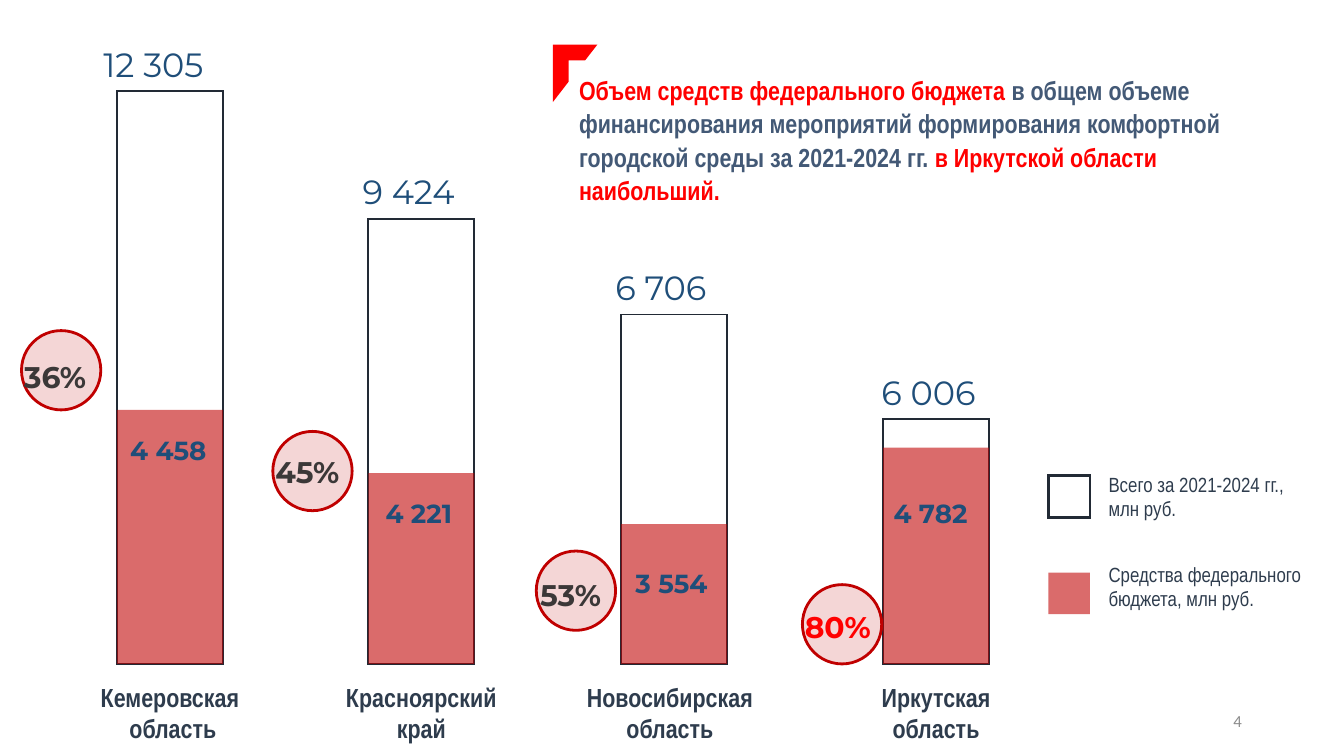
from lxml import etree
from pptx import Presentation
from pptx.dml.color import RGBColor
from pptx.enum.shapes import MSO_SHAPE
from pptx.enum.text import MSO_ANCHOR, MSO_AUTO_SIZE, PP_ALIGN
from pptx.oxml.ns import qn
from pptx.util import Inches, Pt

COLORS = {
    "red": "FF0000", "crimson": "C00000", "outline": "222A35",
    "blue": "1F4E79", "slate": "2E3C4D", "steel": "435976",
    "dark": "3B3838", "gray": "8C8C8C",
}
TOTAL = {"name": "Montserrat", "size": Pt(18), "color": "blue"}
FEDERAL = {"name": "Montserrat", "size": Pt(14), "bold": True, "color": "blue"}
SHARE = {"name": "Montserrat", "size": Pt(16), "bold": True, "color": "dark"}
REGION = {"name": "Arial Narrow", "size": Pt(14), "bold": True, "color": "slate"}
LEGEND = {"name": "Arial Narrow", "size": Pt(11), "color": "slate"}
PAGE = {"name": "Calibri", "size": Pt(9), "color": "gray"}
GROW = {"auto_size": MSO_AUTO_SIZE.SHAPE_TO_FIT_TEXT}


class Builder:
    def __init__(self, slide):
        self.s = slide

    def shape(self, kind, box, fill=None, alpha=None, line=None, width=1):
        sp = self.s.shapes.add_shape(kind, *map(Inches, box))
        sp.shadow.inherit = False
        if fill:
            sp.fill.solid()
            sp.fill.fore_color.rgb = RGBColor.from_string(COLORS[fill])
            if alpha:
                clr = sp._element.spPr.find(".//" + qn("a:srgbClr"))
                etree.SubElement(clr, qn("a:alpha"), val=str(alpha * 1000))
        else:
            sp.fill.background()
        if line:
            sp.line.color.rgb = RGBColor.from_string(COLORS[line])
            sp.line.width = Pt(width)
            ln = sp._element.spPr.find(qn("a:ln"))
            etree.SubElement(ln, qn("a:miter"), lim="800000")
        else:
            sp.line.fill.background()

    def text(self, box, paragraphs, style, para=None, frame=None):
        """Each paragraph is a list of (text, style overrides) runs."""
        tf = self.s.shapes.add_textbox(*map(Inches, box)).text_frame
        for key, value in {"word_wrap": True, **(frame or GROW)}.items():
            setattr(tf, key, value)
        for i, runs in enumerate(paragraphs):
            p = tf.add_paragraph() if i else tf.paragraphs[0]
            for key, value in (para or {}).items():
                setattr(p, key, value)
            for words, changes in runs:
                r = p.add_run()
                r.text = words
                for key, value in {**style, **changes}.items():
                    if key == "color":
                        r.font.color.rgb = RGBColor.from_string(COLORS[value])
                    else:
                        setattr(r.font, key, value)

    def label(self, box, words, style, **options):
        self.text(box, [[(line, {})] for line in words.split("\n")], style, **options)

    def bar(self, x, top, federal_top, base=4.94, width=0.79):
        self.shape(MSO_SHAPE.RECTANGLE, (x, top, width, base - top), line="outline")
        self.shape(MSO_SHAPE.RECTANGLE, (x, federal_top, width, base - federal_top),
                   "crimson", 58)

    def badge(self, x, y, words, text_x, text_y, color):
        self.shape(MSO_SHAPE.OVAL, (x, y, 0.59, 0.59), "crimson", 16, "crimson", 1.5)
        self.label((text_x, text_y, 0.79, 0.37), words, {**SHARE, "color": color})


prs = Presentation()
prs.slide_width = Inches(10)
prs.slide_height = prs.slide_width * 9 // 16
b = Builder(prs.slides.add_slide(prs.slide_layouts[6]))

# Regions: bar (x, top, federal top), total, federal, share, name
regions = [
    ((0.87, 0.68, 3.05), ("12 305", 0.67, 0.28, 1.19), ("4 458", 0.87, 3.18, 0.79),
     (0.16, 2.46, "36%", 0.08, 2.62, "dark"), ("Кемеровская\n область", 0.58, 1.37)),
    ((2.74, 1.63, 3.52), ("9 424", 2.6, 1.22, 1.07), ("4 221", 2.77, 3.65, 0.79),
     (2.03, 3.21, "45%", 1.95, 3.33, "dark"), ("Красноярский край", 2.45, 1.37)),
    ((4.62, 2.34, 3.9), ("6 706", 4.48, 1.94, 1.02), ("3 554", 4.63, 4.17, 0.79),
     (3.99, 4.1, "53%", 3.92, 4.24, "dark"), ("Новосибирская область", 4.21, 1.55)),
    ((6.57, 3.12, 3.33), ("6 006", 6.46, 2.72, 1.3), ("4 782", 6.55, 3.65, 0.82),
     (5.97, 4.35, "80%", 5.89, 4.48, "red"), ("Иркутская область", 6.28, 1.37)),
]
for bar, (total, tx, ty, tw), (federal, fx, fy, fw), badge, (name, nx, nw) in regions:
    b.bar(*bar)
    b.label((tx, ty, tw, 0.4), total, TOTAL)
    b.label((fx, fy, fw, 0.34), federal, FEDERAL)
    b.badge(*badge)
    b.label((nx, 5.02, nw, 0.58), name, REGION, para={"alignment": PP_ALIGN.CENTER})

# Legend
b.shape(MSO_SHAPE.RECTANGLE, (7.8, 3.54, 0.31, 0.31), line="outline", width=1.5)
b.label((8.15, 3.46, 1.73, 0.47), "Всего за 2021-2024 гг., млн руб.", LEGEND)
b.shape(MSO_SHAPE.RECTANGLE, (7.8, 4.26, 0.31, 0.31), "crimson", 58)
b.label((8.15, 4.13, 1.77, 0.47), "Средства федерального бюджета, млн руб.", LEGEND)

# Key message with corner mark
b.text((4.21, 0.48, 5.51, 1.11), [[
    ("Объем средств федерального бюджета ", {"color": "red"}),
    ("в общем объеме финансирования мероприятий формирования комфортной "
     "городской среды за 2021-2024 гг. ", {"color": "steel"}),
    ("в Иркутской области наибольший.", {"color": "red"}),
]], REGION, para={"line_spacing": 1.07, "space_after": Pt(8)},
    frame={"vertical_anchor": MSO_ANCHOR.MIDDLE})
b.shape(MSO_SHAPE.HALF_FRAME, (4.12, 0.34, 0.31, 0.4), "red", line="red")

# Page number
b.label((7.06, 5.21, 2.25, 0.3), "4", PAGE, para={"alignment": PP_ALIGN.RIGHT},
        frame={"vertical_anchor": MSO_ANCHOR.MIDDLE,
               "margin_left": Inches(0.07), "margin_right": Inches(0.07),
               "margin_top": Inches(0.04), "margin_bottom": Inches(0.04)})

prs.save("out.pptx")
